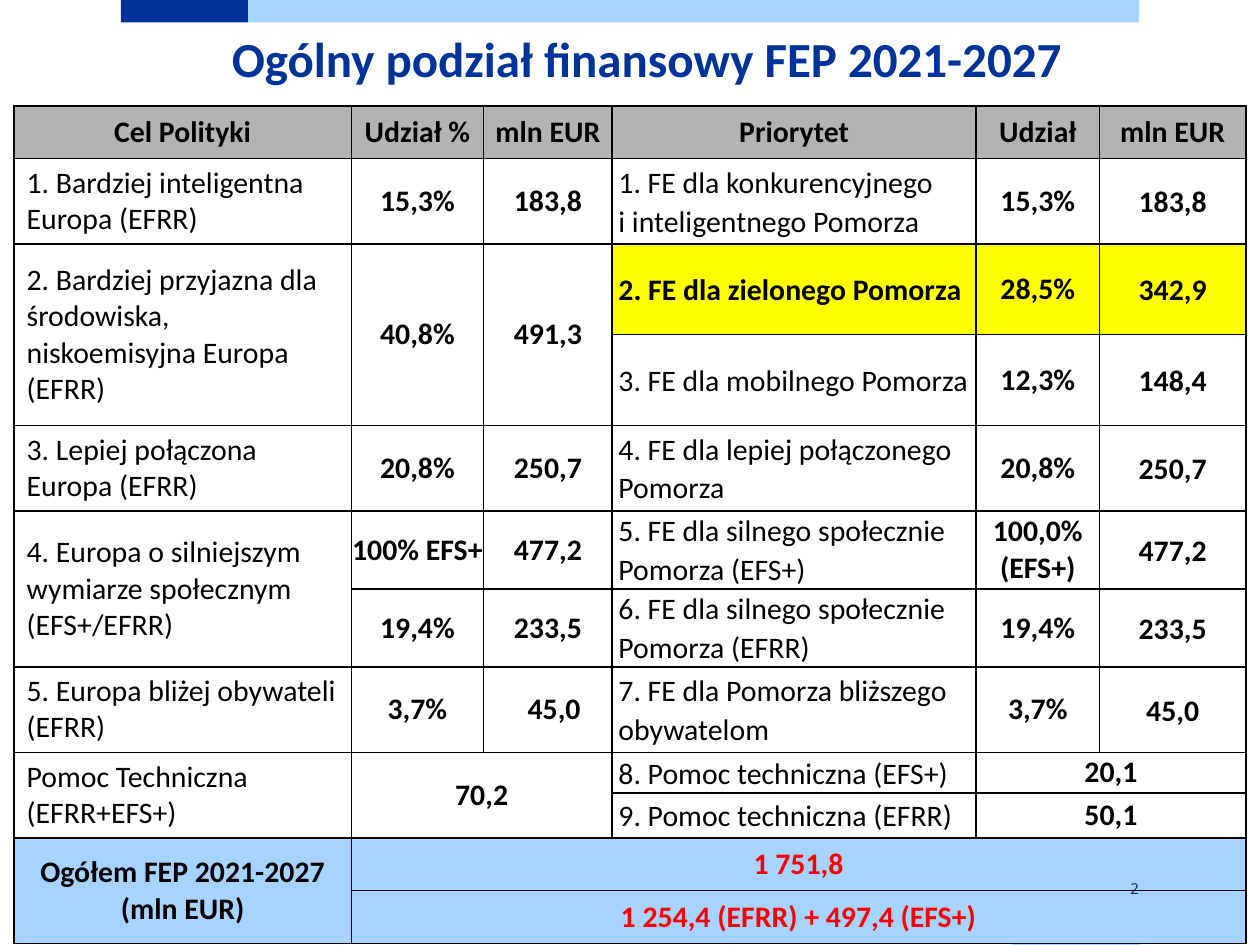
from collections import namedtuple

from lxml.etree import SubElement
from pptx import Presentation
from pptx.dml.color import RGBColor
from pptx.enum.shapes import MSO_SHAPE as Shape
from pptx.enum.text import MSO_ANCHOR as Anchor, PP_ALIGN as Align
from pptx.oxml.ns import qn
from pptx.util import Inches, Pt

NAVY = RGBColor(0x00, 0x33, 0x99)
DARK_NAVY = RGBColor(0x00, 0x20, 0x73)
SKY = RGBColor(0xA6, 0xD3, 0xFF)
GREY = RGBColor(0xB3, 0xB3, 0xB3)
YELLOW = RGBColor(0xFF, 0xFF, 0x00)
RED = RGBColor(0xFF, 0x00, 0x00)
BLACK = RGBColor(0x00, 0x00, 0x00)
WHITE = RGBColor(0xFF, 0xFF, 0xFF)

GRID_LEFT = Inches(0.96)
COLUMN = Inches(1.01)
ROW = Inches(7.5) / 42

Look = namedtuple("Look", "align bold side ends spacing")
HEADING = Look(Align.CENTER, True, 0, 0, 1)
GOAL = Look(Align.LEFT, False, 0.1, 0.05, 1)
PRIORITY = Look(Align.LEFT, False, 0.05, 0, 1.07)
AMOUNT = Look(Align.CENTER, True, 0.05, 0, 1.07)
COLUMN_LOOKS = [GOAL, HEADING, HEADING, PRIORITY, HEADING, AMOUNT]

COLUMN_SPANS = [2.65, 1.04, 1.01, 2.86, 0.97, 1.15]
ROW_SPANS = [2.35, 3.8, 4.03, 4.03, 3.8, 3.47, 3.47, 3.8, 1.8, 2, 2.35, 2.35]

BUDGET = [
    ["Cel Polityki", "Udział %", "mln EUR", "Priorytet", "Udział", "mln EUR"],
    ["1. Bardziej inteligentna Europa (EFRR)", "15,3%", "183,8",
     "1. FE dla konkurencyjnego \vi inteligentnego Pomorza", "15,3%", "183,8"],
    ["2. Bardziej przyjazna dla środowiska, niskoemisyjna Europa (EFRR)", "40,8%", "491,3",
     "2. FE dla zielonego Pomorza", "28,5%", "342,9"],
    ["", "", "", "3. FE dla mobilnego Pomorza", "12,3%", "148,4"],
    ["3. Lepiej połączona Europa (EFRR)", "20,8%", "250,7",
     "4. FE dla lepiej połączonego Pomorza", "20,8%", "250,7"],
    ["4. Europa o silniejszym wymiarze społecznym (EFS+/EFRR)", "100% EFS+", "477,2",
     "5. FE dla silnego społecznie Pomorza (EFS+)", "100,0%\v(EFS+)", "477,2"],
    ["", "19,4%", "233,5", "6. FE dla silnego społecznie Pomorza (EFRR)", "19,4%", "233,5"],
    ["5. Europa bliżej obywateli (EFRR)", "3,7%", "45,0",
     "7. FE dla Pomorza bliższego obywatelom", "3,7%", "45,0"],
    ["Pomoc Techniczna (EFRR+EFS+)", "70,2", "", "8. Pomoc techniczna (EFS+)", "20,1", ""],
    ["", "", "", "9. Pomoc techniczna (EFRR)", "50,1", ""],
    ["Ogółem FEP 2021-2027 (mln EUR)", "1 751,8", "", "", "", ""],
    ["", "1 254,4 (EFRR) + 497,4 (EFS+)", "", "", "", ""],
]
# First and last cell of each merged block, as (row, column)
MERGES = [
    ((2, 0), (3, 0)), ((2, 1), (3, 1)), ((2, 2), (3, 2)), ((5, 0), (6, 0)),
    ((8, 0), (9, 0)), ((8, 1), (9, 2)), ((8, 4), (8, 5)), ((9, 4), (9, 5)),
    ((10, 0), (11, 0)), ((10, 1), (10, 5)), ((11, 1), (11, 5)),
]
HIGHLIGHT_ROW, TOTAL_ROW = 2, 10


def cell_style(row, column):
    """Return the look, fill and text colour for a place in the budget table."""
    if row == 0:
        return HEADING, GREY, BLACK
    if row >= TOTAL_ROW:
        return HEADING, SKY, RED if column else BLACK
    look = COLUMN_LOOKS[column]
    if row == HIGHLIGHT_ROW and column >= 3:
        return look._replace(bold=True), YELLOW, BLACK
    return look, WHITE, BLACK


class SlideBuilder:
    def __init__(self, page):
        self.page = page

    def place(self, column, row, columns, rows):
        """Turn grid units into left, top, width and height."""
        return (int(GRID_LEFT + column * COLUMN), int(row * ROW),
                int(columns * COLUMN), int(rows * ROW))

    def fill_text(self, frame, text, size, color, bold=False, align=Align.CENTER,
                  font="Calibri", spacing=None):
        frame.text = text
        frame.word_wrap = True
        for para in frame.paragraphs:
            para.alignment = align
            if spacing:
                para.line_spacing = spacing
            for span in para.runs:
                span.font.name = font
                span.font.size = Pt(size)
                span.font.bold = bold
                span.font.color.rgb = color

    def bar(self, color, *area):
        box = self.page.shapes.add_shape(Shape.RECTANGLE, *self.place(*area))
        box.shadow.inherit = False
        box.fill.solid()
        box.fill.fore_color.rgb = color
        box.line.fill.background()

    def title(self, text, *area):
        box = self.page.shapes.title
        box.left, box.top, box.width, box.height = self.place(*area)
        box.text_frame.vertical_anchor = Anchor.MIDDLE
        self.fill_text(box.text_frame, text, 28, NAVY, bold=True)

    def page_number(self, text, *area):
        box = self.page.shapes.add_textbox(*self.place(*area))
        frame = box.text_frame
        frame.margin_left = frame.margin_right = 0
        frame.margin_top = frame.margin_bottom = Inches(0.08)
        frame.vertical_anchor = Anchor.MIDDLE
        self.fill_text(frame, text, 8.6, DARK_NAVY, align=Align.RIGHT, font="Open Sans")

    def border(self, cell):
        properties = cell._tc.get_or_add_tcPr()
        for side in ("a:lnL", "a:lnR", "a:lnT", "a:lnB"):
            line = SubElement(properties, qn(side), w=str(Pt(1)))
            fill = SubElement(line, qn("a:solidFill"))
            SubElement(fill, qn("a:srgbClr"), val=str(BLACK))

    def table(self, rows, column, row):
        area = self.place(column, row, sum(COLUMN_SPANS), sum(ROW_SPANS))
        grid = self.page.shapes.add_table(len(rows), len(rows[0]), *area).table
        for line, span in zip(grid.rows, ROW_SPANS):
            line.height = int(span * ROW)
        for line, span in zip(grid.columns, COLUMN_SPANS):
            line.width = int(span * COLUMN)
        for r, texts in enumerate(rows):
            for c, text in enumerate(texts):
                cell = grid.cell(r, c)
                look, fill, color = cell_style(r, c)
                self.border(cell)
                cell.fill.solid()
                cell.fill.fore_color.rgb = fill
                cell.vertical_anchor = Anchor.MIDDLE
                cell.margin_left = cell.margin_right = Inches(look.side)
                cell.margin_top = cell.margin_bottom = Inches(look.ends)
                self.fill_text(cell.text_frame, text, 17, color, look.bold, look.align,
                               spacing=look.spacing)
        for first, last in MERGES:
            grid.cell(*first).merge(grid.cell(*last))
        return grid


def main():
    deck = Presentation()
    deck.slide_width, deck.slide_height = Inches(10), Inches(7.5)
    builder = SlideBuilder(deck.slides.add_slide(deck.slide_layouts[5]))
    builder.bar(NAVY, 0, 0, 1, 1)
    builder.bar(SKY, 1, 0, 7, 1)
    builder.bar(SKY, 7, 41, 1, 1)
    builder.title("Ogólny podział finansowy FEP 2021-2027", -0.54, 0, 9.34, 5.15)
    budget = builder.table(BUDGET, -0.84, 4.7)
    budget.cell(7, 2).margin_left = Inches(0.1)
    builder.page_number("2", 7, 39, 1, 1)
    deck.save("out.pptx")


if __name__ == "__main__":
    main()
